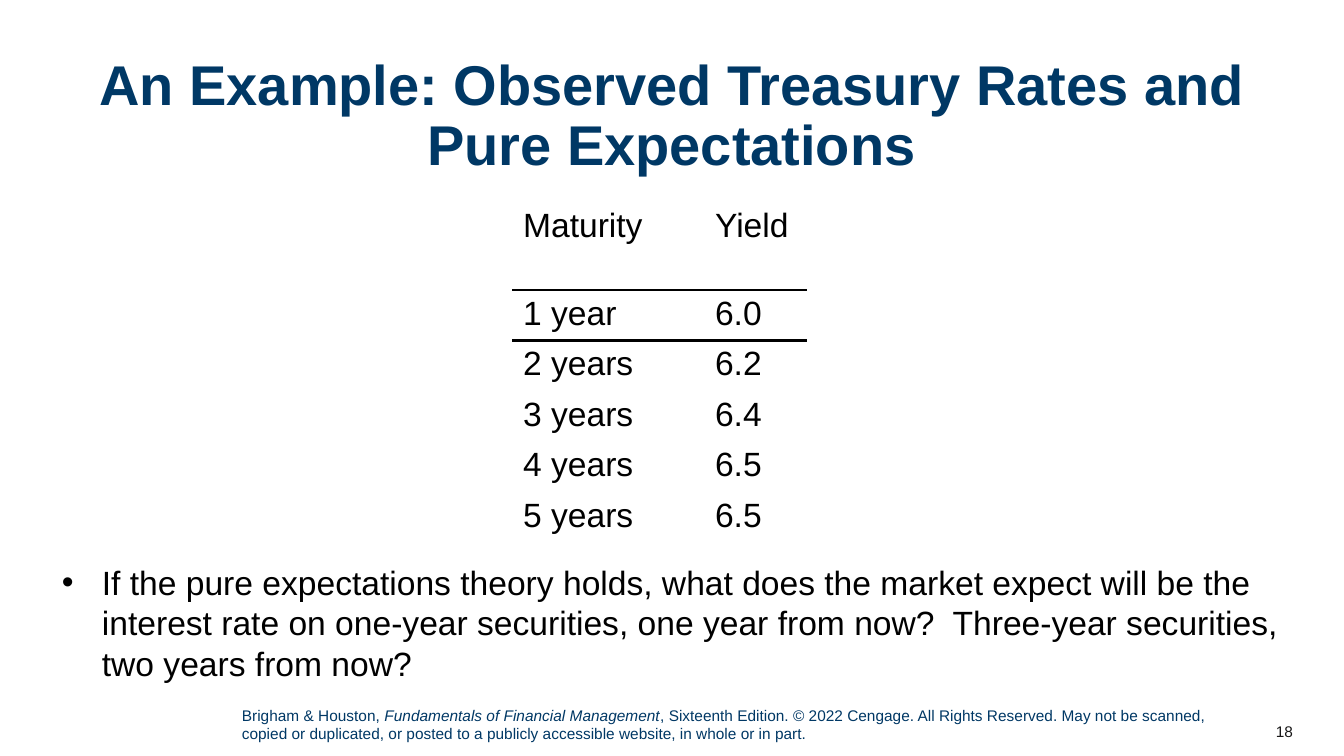
from dataclasses import dataclass

from lxml import etree
from pptx import Presentation
from pptx import util as u
from pptx.dml.color import RGBColor
from pptx.enum import text
from pptx.oxml import ns

PX = 9071.43


@dataclass(frozen=True)
class Theme:
    """Colours, font and type sizes of the slide."""
    font: str = "Arial"
    navy: str = "003865"
    black: str = "000000"
    grey: str = "181717"
    white: str = "FFFFFF"
    title: int = 40
    body: int = 24
    small: int = 11


THEME = Theme()
RATES = [("Maturity", "Yield"), ("1 year", "6.0"), ("2 years", "6.2"),
         ("3 years", "6.4"), ("4 years", "6.5"), ("5 years", "6.5")]
FOOTER = [("Brigham & Houston, ", {}),
          ("Fundamentals of Financial Management", {"italic": True}),
          (", Sixteenth Edition. © 2022 Cengage. All Rights Reserved. May not be scanned, "
           "copied or duplicated, or posted to a publicly accessible website, "
           "in whole or in part.", {})]
QUESTION = ("If the pure expectations theory holds, what does the market expect will be the "
            "interest rate on one-year securities, one year from now?  Three-year securities, "
            "two years from now?")


def px(length):
    """Turn pixels into EMU."""
    return u.Emu(round(length * PX))


def apply(target, values):
    """Set each attribute named in a dict."""
    for name, value in values.items():
        setattr(target, name, value)


def add_span(para, words, size, color, **style):
    """Add one styled run to a paragraph."""
    span = para.add_run()
    span.text = words
    apply(span.font, {"name": THEME.font, "size": u.Pt(size), **style})
    span.font.color.rgb = RGBColor.from_string(color)


def add_text(page, place, spans, size, color, anchor=text.MSO_ANCHOR.TOP, **layout):
    """Add a wrapping one-paragraph text box and return its paragraph."""
    box = page.shapes.add_textbox(*map(px, place))
    apply(box.text_frame, {"word_wrap": True, "vertical_anchor": anchor})
    para = box.text_frame.paragraphs[0]
    apply(para, layout)
    for words, style in spans:
        add_span(para, words, size, color, **style)
    return para


def add_bullet(para, indent):
    """Give a paragraph a hanging round bullet."""
    props = para._p.get_or_add_pPr()
    props.set("marL", str(px(indent)))
    props.set("indent", str(-px(indent)))
    color = etree.SubElement(props, ns.qn("a:buClr"))
    etree.SubElement(color, ns.qn("a:srgbClr"), val=THEME.black)
    etree.SubElement(props, ns.qn("a:buFont"), typeface=THEME.font)
    etree.SubElement(props, ns.qn("a:buChar"), char="•")


def add_border(cell, side):
    """Draw a black rule on one side of a cell."""
    line = etree.Element(ns.qn(f"a:{side}"), w=str(u.Pt(2.25)))
    fill = etree.SubElement(line, ns.qn("a:solidFill"))
    etree.SubElement(fill, ns.qn("a:srgbClr"), val=THEME.black)
    cell._tc.get_or_add_tcPr().insert(0, line)


def add_rates(page, place, widths, heights):
    """Add the table of maturities and yields."""
    table = page.shapes.add_table(len(RATES), len(widths), *map(px, place)).table
    apply(table, {"first_row": False, "horz_banding": False})
    for column, width in zip(table.columns, widths):
        column.width = px(width)
    for index, (row, height) in enumerate(zip(table.rows, heights)):
        row.height = px(height)
        for cell, words in zip(row.cells, RATES[index]):
            cell.fill.solid()
            cell.fill.fore_color.rgb = RGBColor.from_string(THEME.white)
            add_span(cell.text_frame.paragraphs[0], words, THEME.body, THEME.black)
            if index < 2:
                add_border(cell, ("lnB", "lnT")[index])


def main():
    """Build and save the slide."""
    deck = Presentation()
    apply(deck, {"slide_width": px(1344), "slide_height": px(756)})
    page = deck.slides.add_slide(deck.slide_layouts[6])
    add_text(page, (1222, 711, 81, 40), [("18", {})], THEME.small, THEME.grey,
             text.MSO_ANCHOR.MIDDLE, alignment=text.PP_ALIGN.RIGHT)
    add_text(page, (232, 701, 988, 47), FOOTER, THEME.small, THEME.navy)
    add_text(page, (52, 52, 1239, 134),
             [("An Example: Observed Treasury Rates and Pure Expectations", {"bold": True})],
             THEME.title, THEME.navy, alignment=text.PP_ALIGN.CENTER, line_spacing=0.9)
    add_rates(page, (513, 202, 293, 340), (192, 101), [88] + [49] * 5)
    question = add_text(page, (52, 557, 1239, 134), [(QUESTION, {})], THEME.body,
                        THEME.black, space_after=u.Pt(8))
    add_bullet(question, 40)
    deck.save("out.pptx")


if __name__ == "__main__":
    main()
